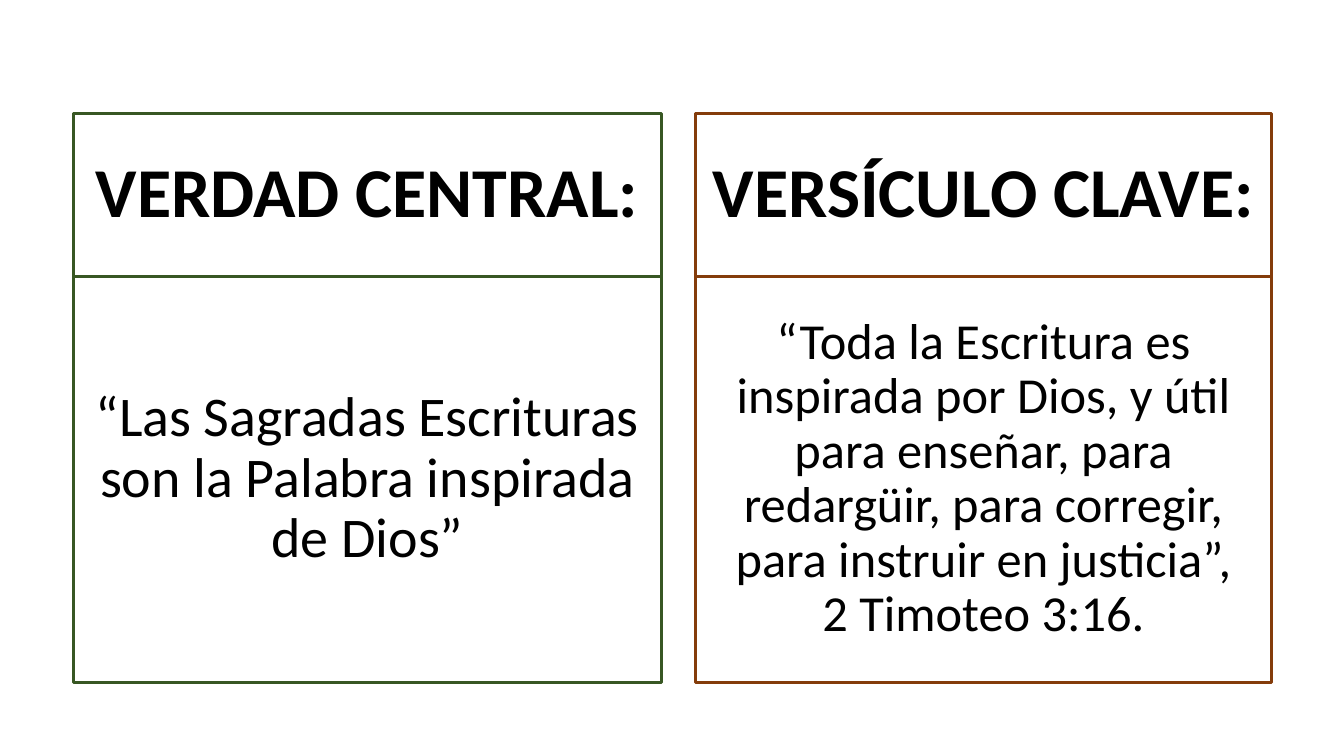
from pptx import Presentation
from pptx.dml.color import RGBColor
from pptx.enum.shapes import MSO_SHAPE
from pptx.enum.text import MSO_ANCHOR, PP_ALIGN
from pptx.util import Inches, Pt

COLORS = {"green": "385723", "brown": "843C0B", "text": "000000"}
TOP, HEADING_HEIGHT, BODY_HEIGHT = 1.13, 1.61, 4.03
COLUMNS = [
    (0.73, 5.83, "green", "VERDAD CENTRAL:",
     "“Las Sagradas Escrituras son la Palabra inspirada de Dios”", 40),
    (6.9, 5.71, "brown", "VERSÍCULO CLAVE:",
     "“Toda la Escritura es inspirada por Dios, y útil para enseñar, "
     "para redargüir, para corregir, para instruir en justicia”,\v2 Timoteo 3:16.", 36),
]


def add_box(slide, left, top, width, height, color, text, size, bold=False):
    """Add an outlined box with centred text."""
    box = slide.shapes.add_shape(
        MSO_SHAPE.RECTANGLE, Inches(left), Inches(top), Inches(width), Inches(height))
    box.shadow.inherit = False
    box.fill.background()
    box.line.color.rgb = RGBColor.from_string(COLORS[color])
    box.line.width = Pt(2.25)
    frame = box.text_frame
    frame.word_wrap = True
    frame.vertical_anchor = MSO_ANCHOR.MIDDLE
    para = frame.paragraphs[0]
    para.text = text
    para.alignment = PP_ALIGN.CENTER
    para.line_spacing = 0.9
    para.font.name = "Calibri"
    para.font.size = Pt(size)
    para.font.bold = bold
    para.font.color.rgb = RGBColor.from_string(COLORS["text"])


def add_column(slide, left, width, color, heading, body, body_size):
    """Stack a heading box on a body box."""
    add_box(slide, left, TOP, width, HEADING_HEIGHT, color, heading, 50, bold=True)
    add_box(slide, left, TOP + HEADING_HEIGHT, width, BODY_HEIGHT, color, body, body_size)


def main():
    """Build the slide and save the deck."""
    deck = Presentation()
    deck.slide_width, deck.slide_height = Inches(13.33), Inches(7.5)
    slide = deck.slides.add_slide(deck.slide_layouts[6])
    for column in COLUMNS:
        add_column(slide, *column)
    deck.save("out.pptx")


if __name__ == "__main__":
    main()
